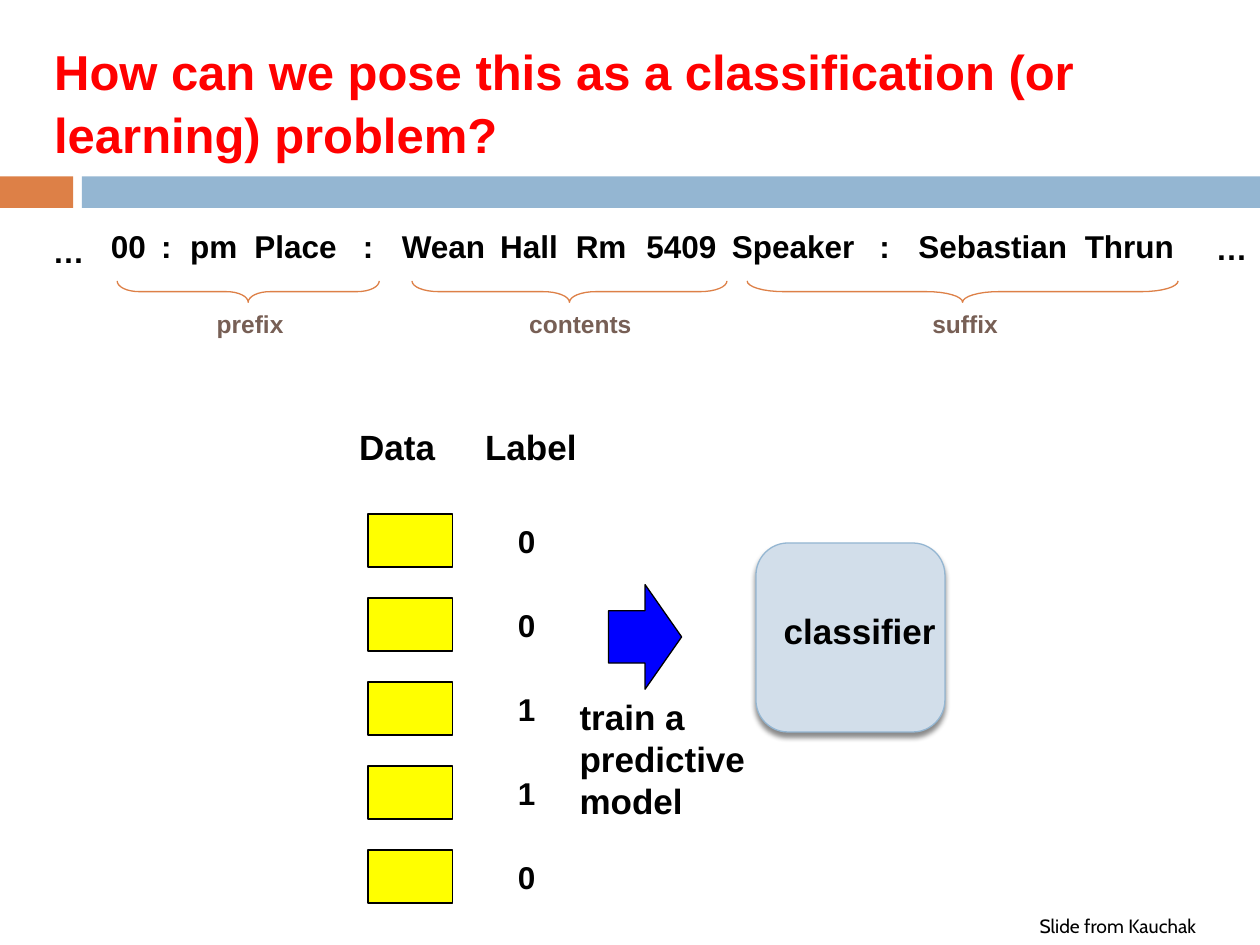
from math import cos, pi, sin

from lxml.etree import SubElement
from pptx import Presentation
from pptx.dml.color import RGBColor
from pptx.enum.shapes import MSO_SHAPE as Shape
from pptx.enum.text import MSO_ANCHOR as Anchor, MSO_AUTO_SIZE as AutoSize, PP_ALIGN as Align
from pptx.oxml.ns import qn
from pptx.util import Inches, Pt

color = RGBColor.from_string


def write(box, text, size, hue="000000", font="Arial", bold=True, wrap=False, tabs=()):
    """Fill a box with left-aligned text, one paragraph per line."""
    frame = box.text_frame
    frame.margin_left = frame.margin_right = Inches(0.05)
    frame.margin_top = frame.margin_bottom = Inches(0.05)
    frame.word_wrap = wrap
    frame.auto_size = AutoSize.NONE
    frame.vertical_anchor = Anchor.TOP
    frame.text = text
    for paragraph in frame.paragraphs:
        paragraph.alignment = Align.LEFT
        if tabs:
            stops = SubElement(paragraph._p.get_or_add_pPr(), qn("a:tabLst"))
            for stop in tabs:
                SubElement(stops, qn("a:tab"), pos=str(Inches(stop)), algn="l")
        paragraph.font.name = font
        paragraph.font.size = Pt(size)
        paragraph.font.bold = bold
        paragraph.font.color.rgb = color(hue)


def add_block(shapes, preset, left, top, width, height, fill, line=None):
    block = shapes.add_shape(preset, Inches(left), Inches(top), Inches(width), Inches(height))
    block.shadow.inherit = False
    block.fill.solid()
    block.fill.fore_color.rgb = color(fill)
    if line:
        block.line.color.rgb = color(line)
        block.line.width = Pt(0.75)
    else:
        block.line.fill.background()
    return block


prs = Presentation()
prs.slide_width, prs.slide_height = Inches(10), Inches(7.5)
slide = prs.slides.add_slide(prs.slide_layouts[5])
shapes = slide.shapes

# Title and the band below it
title = shapes.title
title.left, title.top, title.width, title.height = map(Inches, (0.38, 0.25, 8.9, 0.98))
write(title, "How can we pose this as a classification (or learning) problem?",
      28, "FF0000", wrap=True)
title.text_frame.paragraphs[0].line_spacing = 1.07
add_block(shapes, Shape.RECTANGLE, 0, 1.4, 0.58, 0.25, "DD8047")
add_block(shapes, Shape.RECTANGLE, 0.65, 1.4, 9.35, 0.25, "94B6D2")

# Token sequence, spaced by tab stops
tokens = "00 : pm Place : Wean Hall Rm 5409 Speaker : Sebastian Thrun".split()
token_stops = (0.4, 0.63, 1.14, 2, 2.31, 3.09, 3.69, 4.25, 4.93, 6.1, 6.41, 7.73)
sequence = add_block(shapes, Shape.RECTANGLE, 0.83, 1.75, 8.56, 0.38, "FFFFFF")
write(sequence, "\t".join(tokens), 18, wrap=True, tabs=token_stops)

# Braces under the three parts of the sequence
BRACE_TOP, BRACE_DEPTH, ARC_STEPS = 2.23, 0.17, 8
angles = [pi / 2 * step / ARC_STEPS for step in range(ARC_STEPS + 1)]
for left, width in ((0.93, 2.08), (3.27, 2.5), (5.93, 3.42)):
    rx, ry = width / 12, BRACE_DEPTH / 2
    half = [(rx * (1 - cos(a)), ry * sin(a)) for a in angles]
    half += [(width / 2 - rx + rx * sin(a), ry * (2 - cos(a))) for a in angles]
    outline = half + [(width - x, y) for x, y in reversed(half[:-1])]
    points = [(Inches(left + x), Inches(BRACE_TOP + y)) for x, y in outline]
    builder = shapes.build_freeform(*points[0])
    builder.add_line_segments(points[1:], close=False)
    brace = builder.convert_to_shape()
    brace.shadow.inherit = False
    brace.fill.background()
    brace.line.color.rgb = color("DD8047")
    brace.line.width = Pt(0.75)

# Free-standing labels: text, left, top, width, height, size, colour
labels = [
    ("prefix", 1.67, 2.4, 0.64, 0.32, 14, "775F55"),
    ("contents", 4.15, 2.4, 0.92, 0.32, 14, "775F55"),
    ("suffix", 7.35, 2.4, 0.63, 0.32, 14, "775F55"),
    ("…", 0.37, 1.79, 0.36, 0.38, 18, "000000"),
    ("…", 9.6, 1.77, 0.36, 0.38, 18, "000000"),
    ("Data", 2.8, 3.33, 0.72, 0.41, 20, "000000"),
    ("Label", 3.8, 3.33, 0.84, 0.41, 20, "000000"),
    ("train a\npredictive\nmodel", 4.55, 5.47, 1.43, 1.05, 20, "000000"),
]
for text, left, top, width, height, size, hue in labels:
    label = shapes.add_textbox(Inches(left), Inches(top), Inches(width), Inches(height))
    write(label, text, size, hue)

# Training examples with their class
for row, example_class in enumerate("00110"):
    top = 4.08 + row * 2 / 3
    add_block(shapes, Shape.RECTANGLE, 2.92, top, 0.67, 0.42, "FFFF00", "000000")
    class_label = shapes.add_textbox(Inches(4.06), Inches(top + 0.01), Inches(0.25), Inches(0.38))
    write(class_label, example_class, 18)

add_block(shapes, Shape.RIGHT_ARROW, 4.83, 4.64, 0.58, 0.83, "0000FF", "000000")

# Classifier
classifier = shapes.add_group_shape().shapes
model = add_block(classifier, Shape.ROUNDED_RECTANGLE, 6, 4.31, 1.5, 1.5, "D2DEEA", "94B6D2")
model.adjustments[0] = 0.17
effects = model._element.spPr.find(qn("a:effectLst"))
shadow = SubElement(effects, qn("a:outerShdw"), blurRad=str(Pt(3)), dist=str(Pt(2.4)),
                    dir="5400000", rotWithShape="0")
shadow_color = SubElement(shadow, qn("a:srgbClr"), val="000000")
SubElement(shadow_color, qn("a:alpha"), val="45000")
model_name = classifier.add_textbox(Inches(6.17), Inches(4.79), Inches(1.32), Inches(0.41))
write(model_name, "classifier", 20)

credit = shapes.add_textbox(Inches(8.2), Inches(7.21), Inches(1.75), Inches(0.27))
write(credit, "Slide from Kauchak", 11, font="Cabin", bold=False, wrap=True)

prs.save("out.pptx")
